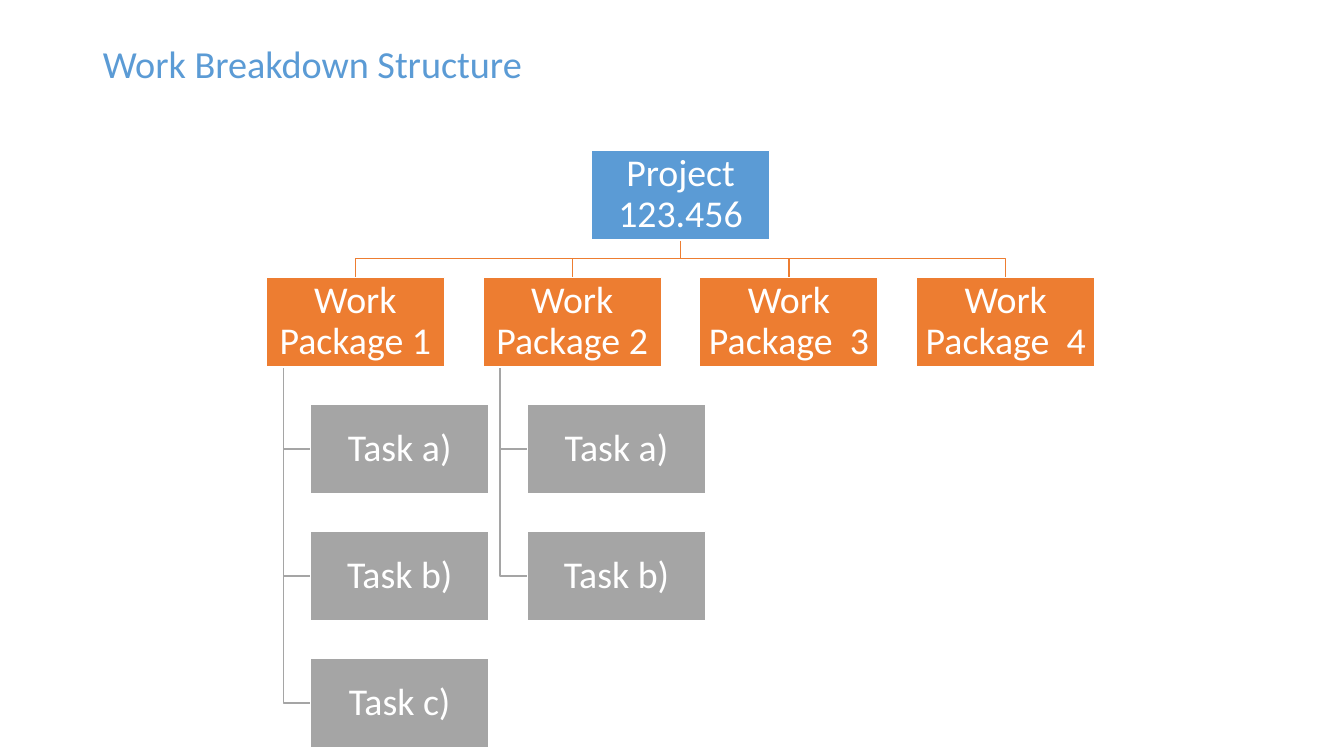
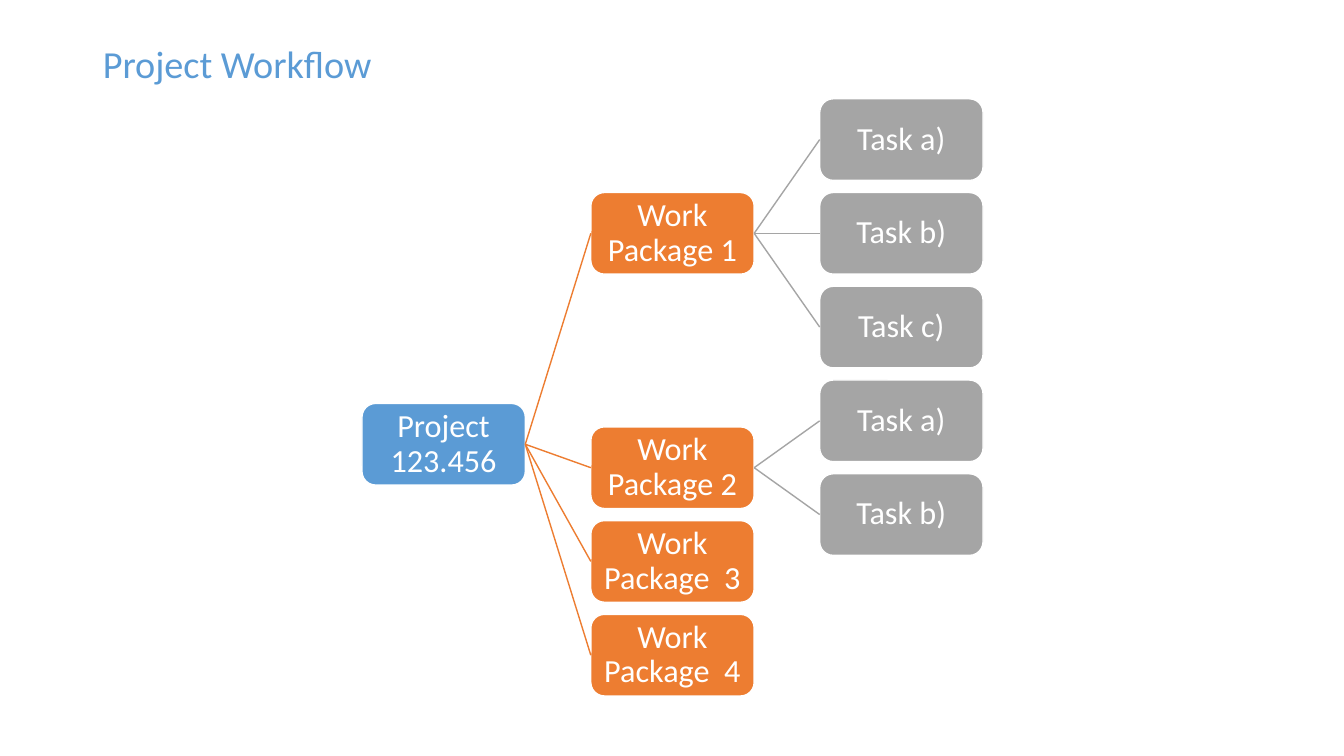
"""Build a work breakdown chart and a project workflow tree from one plan."""
from lxml.etree import SubElement
from pptx import Presentation
from pptx.dml.color import RGBColor
from pptx.enum.shapes import MSO_CONNECTOR, MSO_SHAPE
from pptx.enum.text import MSO_ANCHOR, MSO_AUTO_SIZE, PP_ALIGN
from pptx.oxml.ns import qn
from pptx.util import Inches, Pt

PROJECT = "Project 123.456"
PACKAGES = [
    ("Work Package 1", ["Task a)", "Task b)", "Task c)"]),
    ("Work Package 2", ["Task a)", "Task b)"]),
    ("Work Package  3", []),
    ("Work Package  4", []),
]
COLORS = {"project": "5B9BD5", "package": "ED7D31", "task": "A5A5A5", "white": "FFFFFF"}
TITLE = {"left": 0.92, "top": 0.4, "width": 11.5, "height": 1.17}
FRAME = {"word_wrap": True, "auto_size": MSO_AUTO_SIZE.NONE}
BOX_FRAME = {**FRAME, "vertical_anchor": MSO_ANCHOR.MIDDLE,
             **{f"margin_{side}": Inches(0.02) for side in ("left", "top", "right", "bottom")}}

CHART = {"shape": MSO_SHAPE.RECTANGLE, "width": 1.77, "height": 0.89, "size": 27}
CHART_CENTER, CHART_TOP = 6.75, 1.49
COL_STEP, ROW_STEP = 2.15, 1.26
TASK_INDENT, SPINE_INDENT = 0.44, 0.17

FLOW = {"shape": MSO_SHAPE.ROUNDED_RECTANGLE, "width": 1.62, "height": 0.81, "size": 23}
FLOW_LEFT, FLOW_TOP = 3.59, 0.98
LEVEL_STEP, SLOT_STEP = 2.27, 0.93


def rgb(name):
    return RGBColor.from_string(COLORS[name])


def assign(target, values):
    for name, value in values.items():
        setattr(target, name, value)


def write(tf, text, size, color, align, frame):
    assign(tf, frame)
    p = tf.paragraphs[0]
    assign(p, {"alignment": align, "line_spacing": 0.9})
    r = p.add_run()
    r.text = text
    assign(r.font, {"name": "Calibri", "size": Pt(size)})
    r.font.color.rgb = rgb(color)


def set_line(sp, color):
    sp.line.color.rgb = rgb(color)
    sp.line.width = Pt(1)


def add_slide(prs, title):
    s = prs.slides.add_slide(prs.slide_layouts[5])
    sp = s.shapes.title
    assign(sp, {name: Inches(value) for name, value in TITLE.items()})
    write(sp.text_frame, title, 27.3, "project", PP_ALIGN.LEFT,
          {**FRAME, "vertical_anchor": MSO_ANCHOR.TOP})
    return s


def add_box(s, style, text, kind, left, top):
    sp = s.shapes.add_shape(style["shape"], Inches(left), Inches(top),
                            Inches(style["width"]), Inches(style["height"]))
    sp.shadow.inherit = False
    sp.fill.solid()
    sp.fill.fore_color.rgb = rgb(kind)
    set_line(sp, "white")
    write(sp.text_frame, text, style["size"], "white", PP_ALIGN.CENTER, BOX_FRAME)
    return sp


def add_elbow(s, kind, points):
    start, *rest = [(Inches(x), Inches(y)) for x, y in points]
    builder = s.shapes.build_freeform(*start)
    builder.add_line_segments(rest, close=False)
    sp = builder.convert_to_shape()
    sp.shadow.inherit = False
    sp.fill.background()
    set_line(sp, kind)


def add_link(s, kind, parent, child):
    link = s.shapes.add_connector(MSO_CONNECTOR.STRAIGHT, 0, 0, 0, 0)
    link.begin_connect(parent, 3)
    link.end_connect(child, 1)
    set_line(link, kind)
    SubElement(link._element.spPr, qn("a:effectLst"))


def build_breakdown(prs):
    s = add_slide(prs, "Work Breakdown Structure")
    width, height = CHART["width"], CHART["height"]
    package_top = CHART_TOP + ROW_STEP
    project_bottom = CHART_TOP + height
    bus = (project_bottom + package_top) / 2
    boxes = [(PROJECT, "project", CHART_CENTER - width / 2, CHART_TOP)]
    for col, (package, tasks) in enumerate(PACKAGES):
        center = CHART_CENTER + (col - (len(PACKAGES) - 1) / 2) * COL_STEP
        left = center - width / 2
        boxes.append((package, "package", left, package_top))
        add_elbow(s, "package", [(CHART_CENTER, project_bottom), (CHART_CENTER, bus),
                                 (center, bus), (center, package_top)])
        spine, task_left = left + SPINE_INDENT, left + TASK_INDENT
        for row, task in enumerate(tasks, 1):
            top = package_top + row * ROW_STEP
            middle = top + height / 2
            boxes.append((task, "task", task_left, top))
            add_elbow(s, "task", [(spine, package_top + height), (spine, middle),
                                  (task_left, middle)])
    for box in boxes:
        add_box(s, CHART, *box)


def build_workflow(prs):
    s = add_slide(prs, "Project Workflow")

    def place(text, kind, level, slot):
        return add_box(s, FLOW, text, kind, FLOW_LEFT + level * LEVEL_STEP,
                       FLOW_TOP + slot * SLOT_STEP)

    package_slots, task_slots, used = [], [], 0
    for _, tasks in PACKAGES:
        slots = list(range(used, used + len(tasks)))
        used += len(tasks)
        task_slots.append(slots)
        package_slots.append(sum(slots) / len(slots) if slots else package_slots[-1] + 1)

    project = place(PROJECT, "project", 0, (package_slots[0] + package_slots[-1]) / 2)
    for (name, tasks), slot, slots in zip(PACKAGES, package_slots, task_slots):
        package = place(name, "package", 1, slot)
        add_link(s, "package", project, package)
        for task, task_slot in zip(tasks, slots):
            add_link(s, "task", package, place(task, "task", 2, task_slot))


def main():
    prs = Presentation()
    prs.slide_width, prs.slide_height = Inches(13.33), Inches(7.5)
    build_breakdown(prs)
    build_workflow(prs)
    prs.save("out.pptx")


if __name__ == "__main__":
    main()
